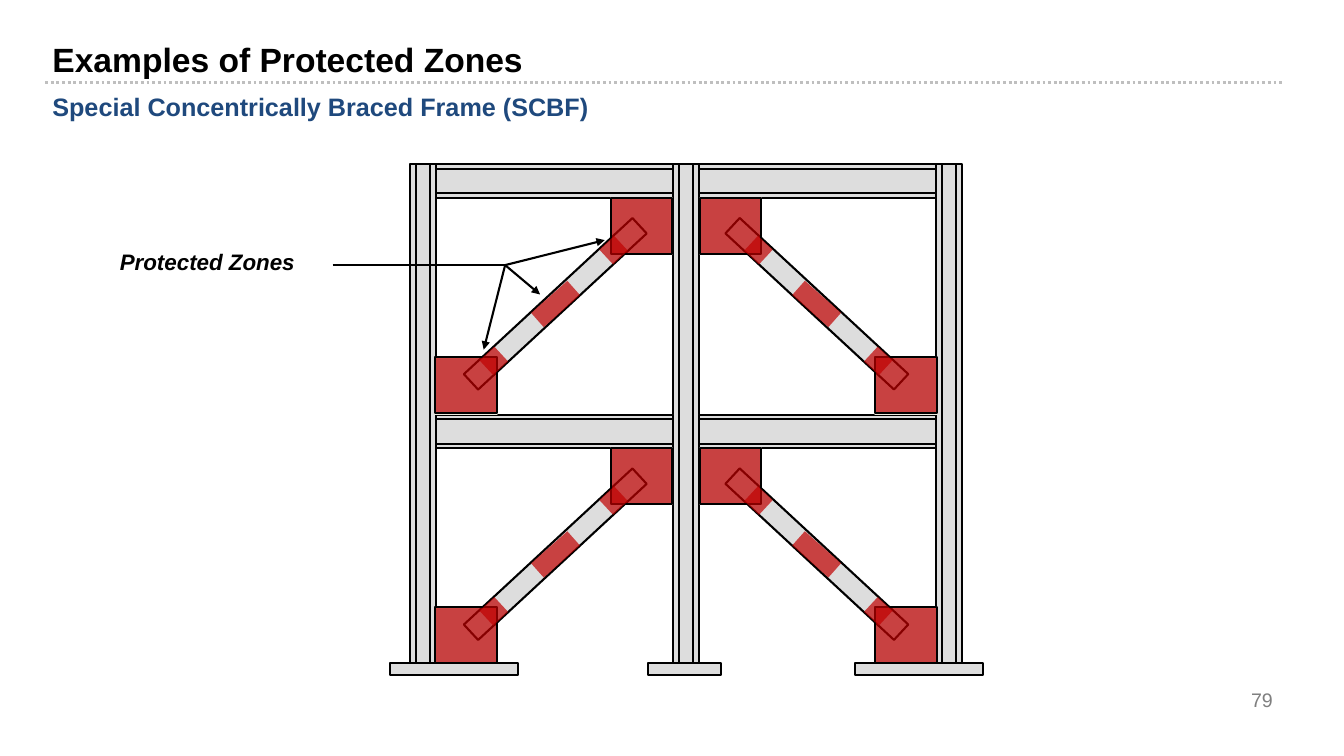
from dataclasses import dataclass

import lxml.etree
import pptx
import pptx.dml.color
import pptx.enum.dml
import pptx.enum.shapes
import pptx.enum.text
import pptx.oxml.ns
import pptx.util

Cm = pptx.util.Cm
Pt = pptx.util.Pt
qn = pptx.oxml.ns.qn
Align = pptx.enum.text.PP_ALIGN
Anchor = pptx.enum.text.MSO_ANCHOR


@dataclass
class Theme:
    font: str = "Arial"
    ink: str = "000000"
    heading: str = "1F497D"
    muted: str = "7F7F7F"
    divider: str = "BFBFBF"
    steel: str = "DDDDDD"
    edge: str = "EEECE1"
    protected: str = "C00000"
    title_size: int = 24
    subtitle_size: int = 18
    label_size: int = 16
    number_size: int = 14
    outline: float = 1.5
    divider_width: float = 2


theme = Theme()


def write(box, text, left, top, width, height, size, color=theme.ink, bold=False,
          italic=False, align=Align.LEFT, anchor=Anchor.TOP, inset_top=0.13):
    box.left, box.top, box.width, box.height = Cm(left), Cm(top), Cm(width), Cm(height)
    frame = box.text_frame
    frame.word_wrap = True
    frame.auto_size = pptx.enum.text.MSO_AUTO_SIZE.NONE
    frame.vertical_anchor = anchor
    frame.margin_left = frame.margin_right = Cm(0.25)
    frame.margin_top, frame.margin_bottom = Cm(inset_top), Cm(0.13)
    para = frame.paragraphs[0]
    para.alignment = align
    para.space_before = Pt(0)
    span = para.add_run()
    span.text = text
    span.font.name, span.font.size = theme.font, Pt(size)
    span.font.bold, span.font.italic = bold, italic
    span.font.color.rgb = pptx.dml.color.RGBColor.from_string(color)


def add_plate(shapes, left, top, width, height, fill=theme.steel, line=theme.ink,
              rotation=0, opacity=100):
    plate = shapes.add_shape(pptx.enum.shapes.MSO_SHAPE.RECTANGLE,
                             Cm(left), Cm(top), Cm(width), Cm(height))
    plate.shadow.inherit = False
    plate.rotation = rotation
    plate.fill.solid()
    plate.fill.fore_color.rgb = pptx.dml.color.RGBColor.from_string(fill)
    if opacity < 100:
        color = plate._element.spPr.find(qn("a:solidFill")).find(qn("a:srgbClr"))
        lxml.etree.SubElement(color, qn("a:alpha")).set("val", str(opacity * 1000))
    if line:
        plate.line.color.rgb = pptx.dml.color.RGBColor.from_string(line)
        plate.line.width = Pt(theme.outline)
    else:
        plate.line.fill.background()


deck = pptx.Presentation()
deck.slide_width, deck.slide_height = Cm(33.87), Cm(19.05)
page = deck.slides.add_slide(deck.slide_layouts[5])

# Title, subtitle and page number
write(page.shapes.title, "Examples of Protected Zones", 1.07, 0.74, 31.19, 1.12,
      theme.title_size, bold=True, inset_top=0.23)
write(page.shapes.add_textbox(0, 0, 0, 0), "Special Concentrically Braced Frame (SCBF)",
      1.07, 2.08, 31.19, 1.24, theme.subtitle_size, theme.heading, bold=True, inset_top=0.23)
write(page.shapes.add_textbox(0, 0, 0, 0), "79", 24.43, 17.12, 7.9, 1.02,
      theme.number_size, theme.muted, align=Align.RIGHT, anchor=Anchor.MIDDLE)

# Columns and beams, with their flange lines
lines = [(1.14, 2.08, 32.33, 2.08, "divider")]
frame_left, frame_top, bay_pitch, storey_pitch = 10.34, 4.14, 6.63, 6.31
column_width, column_height = 0.64, 12.67
beam_length, beam_depth = bay_pitch - column_width, 0.84

for column in range(3):
    x = frame_left + column * bay_pitch
    add_plate(page.shapes, x, frame_top, column_width, column_height)
    for offset in (0.14, 0.49):
        lines.append((x + offset, frame_top, x + offset, frame_top + column_height, "flange"))

for storey in range(2):
    for bay in range(2):
        x = frame_left + column_width + bay * bay_pitch
        y = frame_top + storey * storey_pitch
        add_plate(page.shapes, x, y, beam_length, beam_depth)
        for offset in (0.11, 0.73):
            lines.append((x, y + offset, x + beam_length, y + offset, "flange"))

# Braces: the upper left one, mirrored across the middle column and repeated below
backing = dict(line=theme.edge)
gusset = dict(fill=theme.protected, opacity=70)
zone = dict(fill=theme.protected, opacity=70, line=None)
brace_parts = [
    (10.97, 9.02, 1.55, 1.42, 0, backing),
    (15.39, 4.98, 1.55, 1.42, 0, backing),
    (11.1, 7.39, 5.79, 0.53, 317.2, {}),
    (15.39, 4.98, 1.55, 1.42, 0, gusset),
    (15.21, 6.05, 0.51, 0.51, 317.2, zone),
    (10.97, 8.99, 1.55, 1.42, 0, gusset),
    (12.19, 8.84, 0.51, 0.51, 317.2, zone),
    (13.39, 7.42, 1.22, 0.48, 318.4, zone),
]
mirror_sum = 2 * (frame_left + bay_pitch) + column_width
for mirrored in (False, True):
    for storey in range(2):
        brace = page.shapes.add_group_shape()
        for left, top, width, height, angle, style in brace_parts:
            if mirrored:
                left, angle = mirror_sum - left - width, -angle % 360
            add_plate(brace.shapes, left, top + storey * storey_pitch, width, height,
                      rotation=angle, **style)

# Label and its leader arrows
write(page.shapes.add_textbox(0, 0, 0, 0), "Protected Zones", 2.77, 6.12, 6.45, 0.94,
      theme.label_size, bold=True, italic=True)
fork_x, fork_y = 12.73, 6.68
lines.append((8.38, fork_y, fork_x, fork_y, "leader"))
for tip_x, tip_y in ((13.61, 7.42), (15.24, 6.05), (12.19, 8.81)):
    lines.append((fork_x, fork_y, tip_x, tip_y, "arrow"))

# All lines
for x1, y1, x2, y2, role in lines:
    line = page.shapes.add_connector(pptx.enum.shapes.MSO_CONNECTOR.STRAIGHT,
                                     Cm(x1), Cm(y1), Cm(x2), Cm(y2))
    divider = role == "divider"
    line.line.color.rgb = pptx.dml.color.RGBColor.from_string(
        theme.divider if divider else theme.ink)
    line.line.width = Pt(theme.divider_width if divider else theme.outline)
    if divider:
        line.line.dash_style = pptx.enum.dml.MSO_LINE.ROUND_DOT
    if role == "arrow":
        outline = line._element.spPr.find(qn("a:ln"))
        lxml.etree.SubElement(outline, qn("a:tailEnd")).set("type", "triangle")
    lxml.etree.SubElement(line._element.spPr, qn("a:effectLst"))

# Base plates
for left, width in ((9.83, 3.23), (21.54, 3.23), (16.33, 1.85)):
    add_plate(page.shapes, left, 16.71, width, 0.3)

deck.save("out.pptx")
